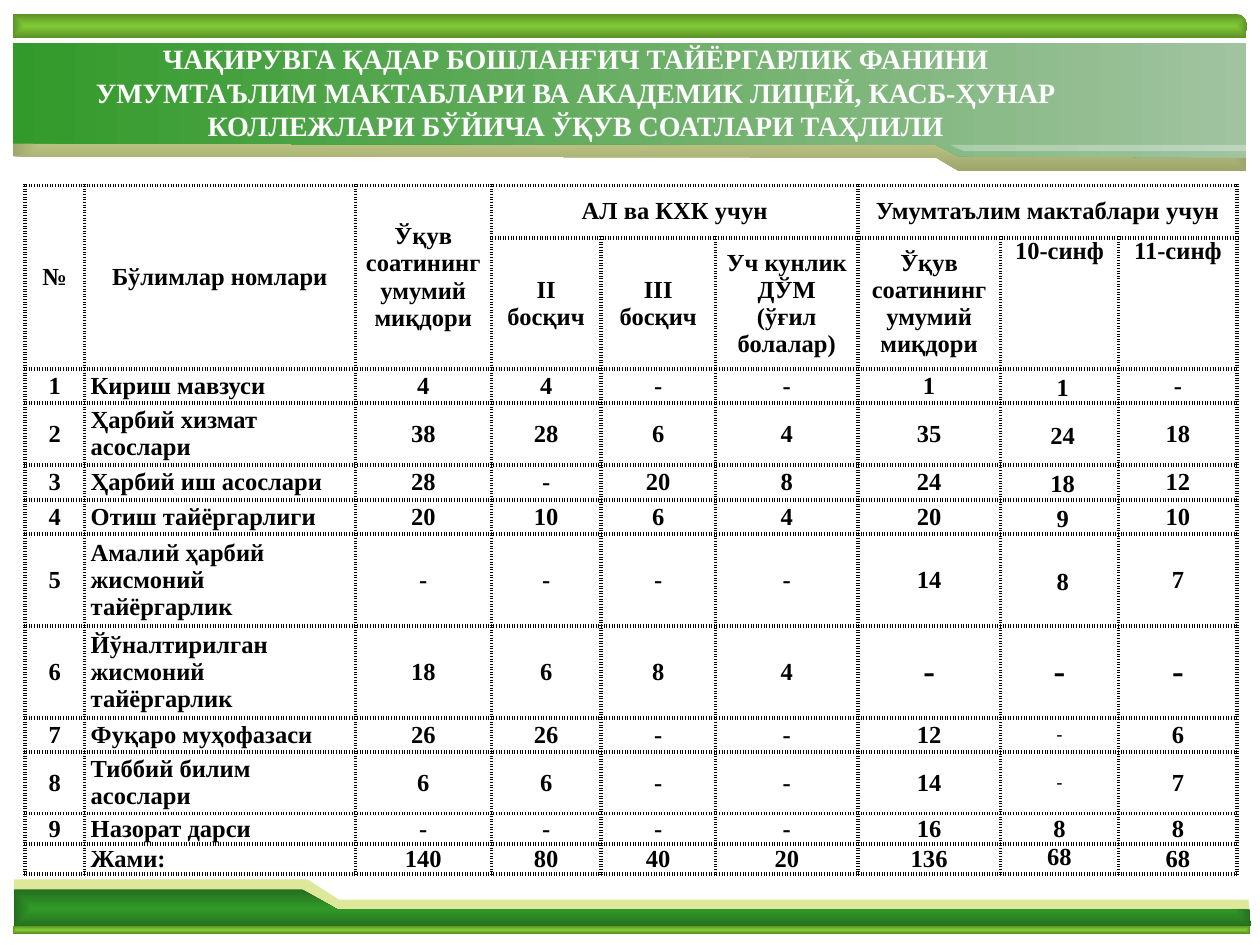
from dataclasses import dataclass

from lxml import etree
from pptx import Presentation
from pptx.dml.color import RGBColor
from pptx.enum.shapes import MSO_SHAPE
from pptx.enum.text import MSO_ANCHOR, PP_ALIGN
from pptx.oxml import parse_xml
from pptx.oxml.ns import nsdecls, qn
from pptx.util import Emu, Inches, Pt

RECT = MSO_SHAPE.RECTANGLE
MID, TOP = MSO_ANCHOR.MIDDLE, MSO_ANCHOR.TOP
LEFT, CENTER, FULL = PP_ALIGN.LEFT, PP_ALIGN.CENTER, PP_ALIGN.JUSTIFY
UNIT = 9144  # the slide is a grid of 1000 by 750 units


@dataclass(frozen=True)
class Theme:
    font: str = "Times New Roman"
    ink: str = "000000"
    white: str = "FFFFFF"
    cream: str = "DDE89A"
    olive: str = "9EA66E"
    green: str = "329A2A"
    forest: str = "246E1E"
    lime: str = "80CB35"
    moss: str = "5C9126"
    mist: str = "A1C3A0"
    title: int = 16
    body: int = 14
    large: int = 20
    small: int = 10
    rule: float = 2.25


T = Theme()


def paint(shape, colors, focus=None):
    """Fill with one colour, or two as a gradient; focus names a centred gradient."""
    shape.shadow.inherit = False
    shape.line.fill.background()
    if len(colors) == 1:
        shape.fill.solid()
        shape.fill.fore_color.rgb = RGBColor.from_string(colors[0])
        return
    shape.fill.gradient()
    shape.fill.gradient_angle = 0
    for stop, color in zip(shape.fill.gradient_stops, colors):
        stop.color.rgb = RGBColor.from_string(color)
    if focus:
        lin = shape.element.spPr.find(qn("a:gradFill")).find(qn("a:lin"))
        lin.getparent().replace(lin, parse_xml(
            f'<a:path {nsdecls("a")} path="{focus}">'
            '<a:fillToRect l="50000" t="50000" r="50000" b="50000"/></a:path>'))


def write(par, text, size, color, align=CENTER):
    par.alignment = align
    run = par.add_run()
    run.text = text
    run.font.name = T.font
    run.font.size = Pt(size)
    run.font.bold = True
    run.font.color.rgb = RGBColor.from_string(color)


prs = Presentation()
prs.slide_width, prs.slide_height = Emu(1000 * UNIT), Emu(750 * UNIT)
slide = prs.slides.add_slide(prs.slide_layouts[6])
shapes = slide.shapes

# Bands at the head and foot
bands = [
    ([(11, 732), (992, 732), (991, 714), (269, 714), (244, 698), (11, 698)],
     [T.cream], None),
    ([(11, 736), (993, 735), (992, 722), (268, 722), (240, 706), (11, 706)],
     [T.green, T.forest], "rect"),
    ([(10, 11), (980, 11), (985, 12), (988, 15), (990, 19), (989, 30), (10, 30)],
     [T.lime, T.moss], "rect"),
    ([(989, 34), (10, 34), (10, 124), (743, 125), (761, 136), (989, 136)],
     [T.cream, T.olive], "rect"),
    ([(989, 34), (10, 34), (10, 114), (743, 115), (761, 124), (989, 125)],
     [T.green, T.mist], None),
]
for points, colors, focus in bands:
    pen = shapes.build_freeform(*points[0], scale=UNIT)
    pen.add_line_segments(points[1:], close=True)
    paint(pen.convert_to_shape(), colors, focus)

base = shapes.add_shape(RECT, *[Emu(n * UNIT) for n in (10, 735, 982, 6)])
paint(base, [T.lime, T.moss], "shape")

pen = shapes.build_freeform(754, 115, scale=UNIT)
pen.add_line_segments([(990, 115), (990, 120), (765, 120)], close=True)
gleam = pen.convert_to_shape()
paint(gleam, [T.white])
tint = gleam.element.spPr.find(qn("a:solidFill"))[0]
etree.SubElement(tint, qn("a:alpha")).set("val", "30000")

# Table of hours
total = "Ўқув соатининг умумий миқдори"
rows = [
    ["№", "Бўлимлар номлари", total, "АЛ ва КХК учун", "", "",
     "Умумтаълим мактаблари учун", "", ""],
    ["", "", "", "II босқич", "III босқич", "Уч кунлик ДЎМ\n(ўғил болалар)",
     total, "10-cинф", "11-синф"],
    ["1", "Кириш мавзуси", "4", "4", "-", "-", "1", "1", "-"],
    ["2", "Ҳарбий хизмат асослари", "38", "28", "6", "4", "35", "24", "18"],
    ["3", "Ҳарбий иш асослари", "28", "-", "20", "8", "24", "18", "12"],
    ["4", "Отиш тайёргарлиги", "20", "10", "6", "4", "20", "9", "10"],
    ["5", "Амалий ҳарбий жисмоний тайёргарлик", "-", "-", "-", "-", "14", "8", "7"],
    ["6", "Йўналтирилган жисмоний тайёргарлик", "18", "6", "8", "4", "-", "-", "-"],
    ["7", "Фуқаро муҳофазаси", "26", "26", "-", "-", "12", "-", "6"],
    ["8", "Тиббий билим асослари", "6", "6", "-", "-", "14", "-", "7"],
    ["9", "Назорат дарси", "-", "-", "-", "-", "16", "8", "8"],
    ["", "Жами:", "140", "80", "40", "20", "136", "68", "68"],
]
widths = [47, 215, 108, 87, 91, 113, 113, 94, 94]
heights = [42, 104, 27, 49, 28, 27, 73, 73, 27, 49, 24, 24]
last = len(rows) - 1
sizes = {(7, 6): T.large, (7, 7): T.large, (7, 8): T.large,
         (8, 7): T.small, (9, 7): T.small}
high = {(1, 7), (1, 8), (last, 7)}

frame = shapes.add_table(len(rows), len(widths), *[
    Emu(n * UNIT) for n in (20, 147, sum(widths), sum(heights))])
table = frame.table
table.first_row = table.horz_banding = False
for col, width in zip(table.columns, widths):
    col.width = Emu(width * UNIT)
for row, height in zip(table.rows, heights):
    row.height = Emu(height * UNIT)
for c in range(3):
    table.cell(0, c).merge(table.cell(1, c))
for c in (3, 6):
    table.cell(0, c).merge(table.cell(0, c + 2))

for r, row in enumerate(rows):
    for c, text in enumerate(row):
        cell = table.cell(r, c)
        inset = c == 7 and 2 <= r <= 6
        cell.margin_left = cell.margin_right = Inches(0.03 if inset else 0.05)
        cell.margin_top = cell.margin_bottom = 0
        cell.vertical_anchor = TOP if (r, c) in high else MID
        cell.fill.background()
        for i, side in enumerate("LRTB"):
            cell._tc.tcPr.insert(i, parse_xml(
                f'<a:ln{side} {nsdecls("a")} w="{Pt(T.rule)}"><a:solidFill>'
                f'<a:srgbClr val="{T.ink}"/></a:solidFill>'
                f'<a:prstDash val="sysDot"/></a:ln{side}>'))
        align = CENTER
        if c == 1 and r > 1:
            align = FULL if r == last else LEFT
        for i, line in enumerate(text.split("\n")):
            par = cell.text_frame.add_paragraph() if i else cell.text_frame.paragraphs[0]
            if not line:
                end = etree.SubElement(par._p, qn("a:endParaRPr"))
                end.set("sz", str(T.body * 100))
                continue
            write(par, line, sizes.get((r, c), T.body), T.ink, align)
            if inset:
                par.line_spacing = 1.15
                par._p.pPr.set("indent", str(Inches(0.05)))
            elif c > 5 and 2 <= r < last:
                par.space_after = Pt(10)

# Title
box = shapes.add_textbox(*[Emu(n * UNIT) for n in (12, 28, 890, 91)])
text = box.text_frame
text.word_wrap = True
write(text.paragraphs[0], "ЧАҚИРУВГА ҚАДАР БОШЛАНҒИЧ ТАЙЁРГАРЛИК ФАНИНИ",
      T.title, T.white)
write(text.add_paragraph(),
      "УМУМТАЪЛИМ МАКТАБЛАРИ ВА АКАДЕМИК ЛИЦЕЙ, КАСБ-ҲУНАР "
      "КОЛЛЕЖЛАРИ БЎЙИЧА ЎҚУВ СОАТЛАРИ ТАҲЛИЛИ", T.title, T.white)

prs.save("out.pptx")
